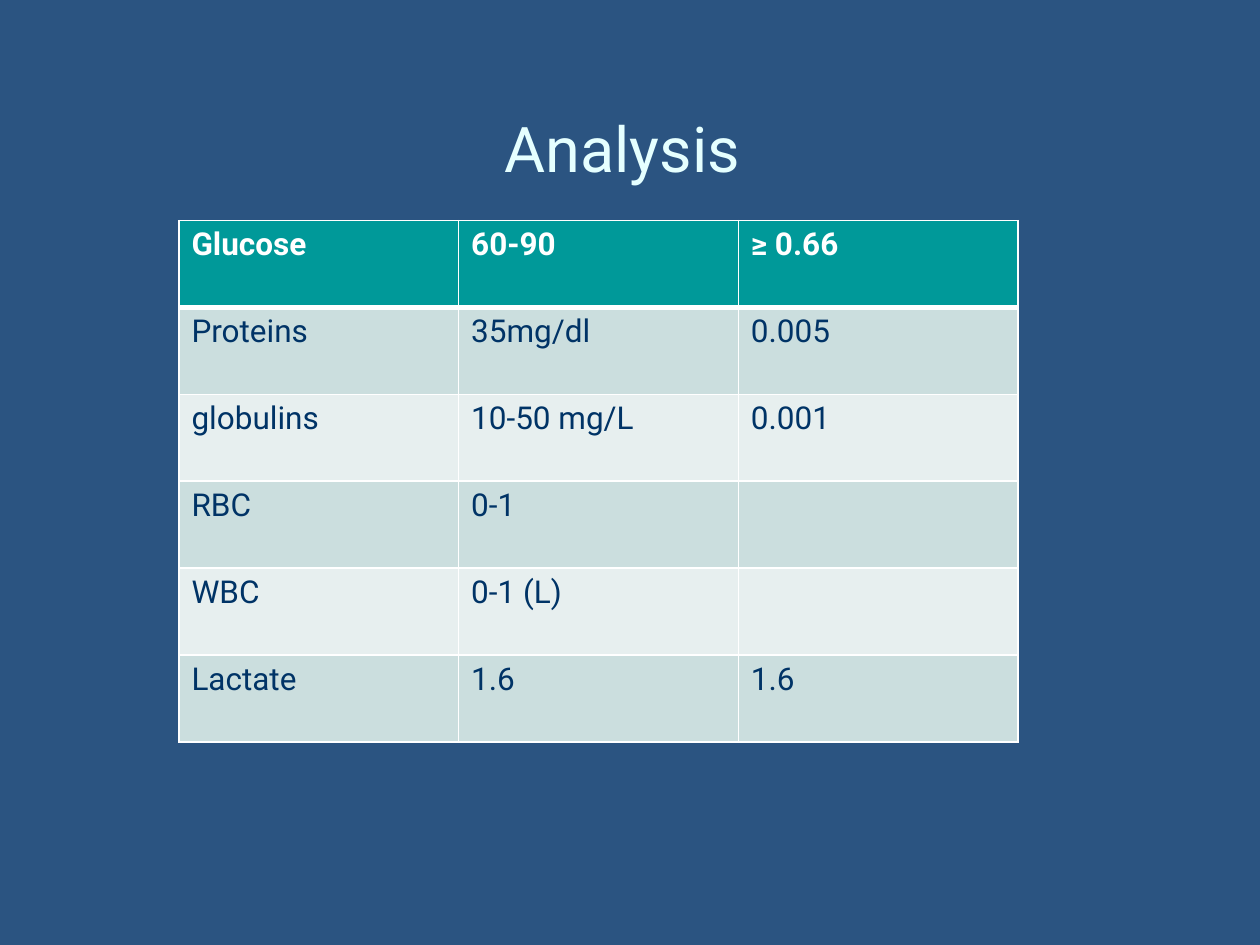
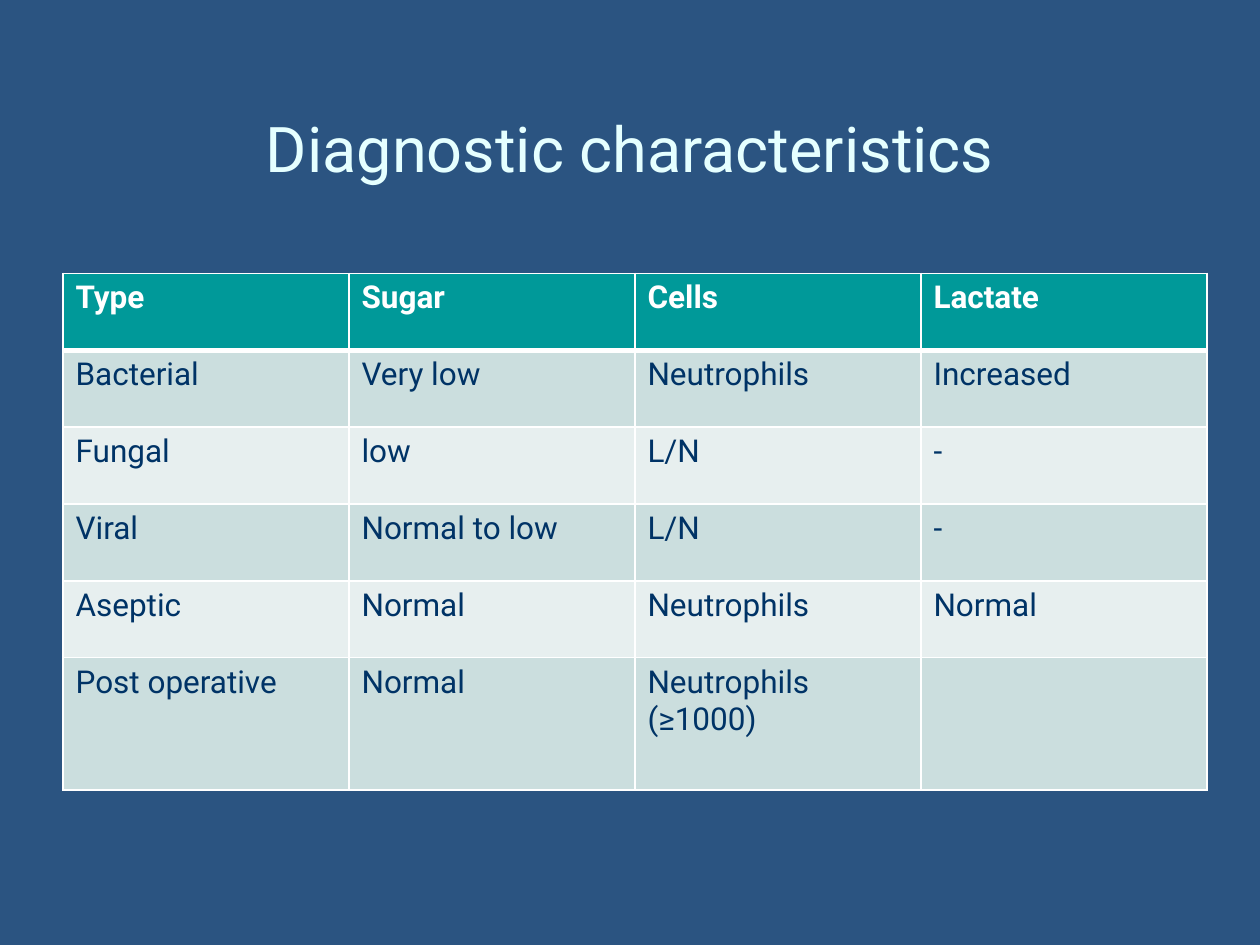
import pptx
import pptx.dml.color
import pptx.enum.text
import pptx.oxml.ns
import pptx.util
from lxml import etree

WIDTH, HEIGHT = 10, 7.5
FONT = "Roboto"
BACKGROUND, TITLE = "2B5481", "E5FFFF"
HEADER, BANDS = "009999", ("E7EFEF", "CBDEDE")
WHITE, NAVY = "FFFFFF", "003366"

ANALYSIS = [
    ("Glucose", "60-90", "≥ 0.66"),
    ("Proteins", "35mg/dl", "0.005"),
    ("globulins", "10-50 mg/L", "0.001"),
    ("RBC", "0-1", ""),
    ("WBC", "0-1 (L)", ""),
    ("Lactate", "1.6", "1.6"),
]
CHARACTERISTICS = [
    ("Type", "Sugar", "Cells", "Lactate"),
    ("Bacterial", "Very low", "Neutrophils", "Increased"),
    ("Fungal", "low", "L/N", "-"),
    ("Viral", "Normal to low", "L/N", "-"),
    ("Aseptic", "Normal", "Neutrophils", "Normal"),
    ("Post operative", "Normal", "Neutrophils (≥1000)", ""),
]


def rgb(value):
    return pptx.dml.color.RGBColor.from_string(value)


def inches(*values):
    return [pptx.util.Inches(v) for v in values]


def paint(fill, color):
    fill.solid()
    fill.fore_color.rgb = rgb(color)


def set_text(p, text, size, color, bold=False):
    p.text = text
    p.font.name = FONT
    p.font.size = pptx.util.Pt(size)
    p.font.bold = bold
    p.font.color.rgb = rgb(color)


def add_title_slide(prs, title):
    s = prs.slides.add_slide(prs.slide_layouts[6])
    paint(s.background.fill, BACKGROUND)
    box = inches(0.05 * WIDTH, 0.42, 0.9 * WIDTH, 0.2 * HEIGHT)
    tf = s.shapes.add_textbox(*box).text_frame
    tf.word_wrap = True
    tf.vertical_anchor = pptx.enum.text.MSO_ANCHOR.MIDDLE
    p = tf.paragraphs[0]
    p.alignment = pptx.enum.text.PP_ALIGN.CENTER
    set_text(p, title, 36, TITLE)
    return s


def set_borders(cell, top, bottom):
    tc_pr = cell._tc.get_or_add_tcPr()
    qn = pptx.oxml.ns.qn
    for side, width in (("L", 1), ("R", 1), ("T", top), ("B", bottom)):
        line = etree.SubElement(tc_pr, qn(f"a:ln{side}"), w=str(pptx.util.Pt(width)))
        fill = etree.SubElement(line, qn("a:solidFill"))
        etree.SubElement(fill, qn("a:srgbClr"), val=WHITE)


def add_banded_table(s, rows, left, top, column_width, row_heights):
    columns = len(rows[0])
    box = inches(left, top, columns * column_width, sum(row_heights))
    table = s.shapes.add_table(len(rows), columns, *box).table
    for column in table.columns:
        column.width = pptx.util.Inches(column_width)
    for i, (row, height) in enumerate(zip(rows, row_heights)):
        table.rows[i].height = pptx.util.Inches(height)
        header = i == 0
        for j, text in enumerate(row):
            cell = table.cell(i, j)
            set_borders(cell, 3 if i == 1 else 1, 3 if header else 1)
            paint(cell.fill, HEADER if header else BANDS[i % 2])
            p = cell.text_frame.paragraphs[0]
            set_text(p, text, 18, WHITE if header else NAVY, header)


def main():
    prs = pptx.Presentation()
    prs.slide_width, prs.slide_height = inches(WIDTH, HEIGHT)

    s = add_title_slide(prs, "Analysis ")
    add_banded_table(s, ANALYSIS, 1.42, 1.75, 2.22, [0.69] * 6)

    s = add_title_slide(prs, "Diagnostic characteristics")
    add_banded_table(s, CHARACTERISTICS, 0.5, 2.17, 2.27, [0.61] * 5 + [1.05])

    prs.save("out.pptx")


if __name__ == "__main__":
    main()
